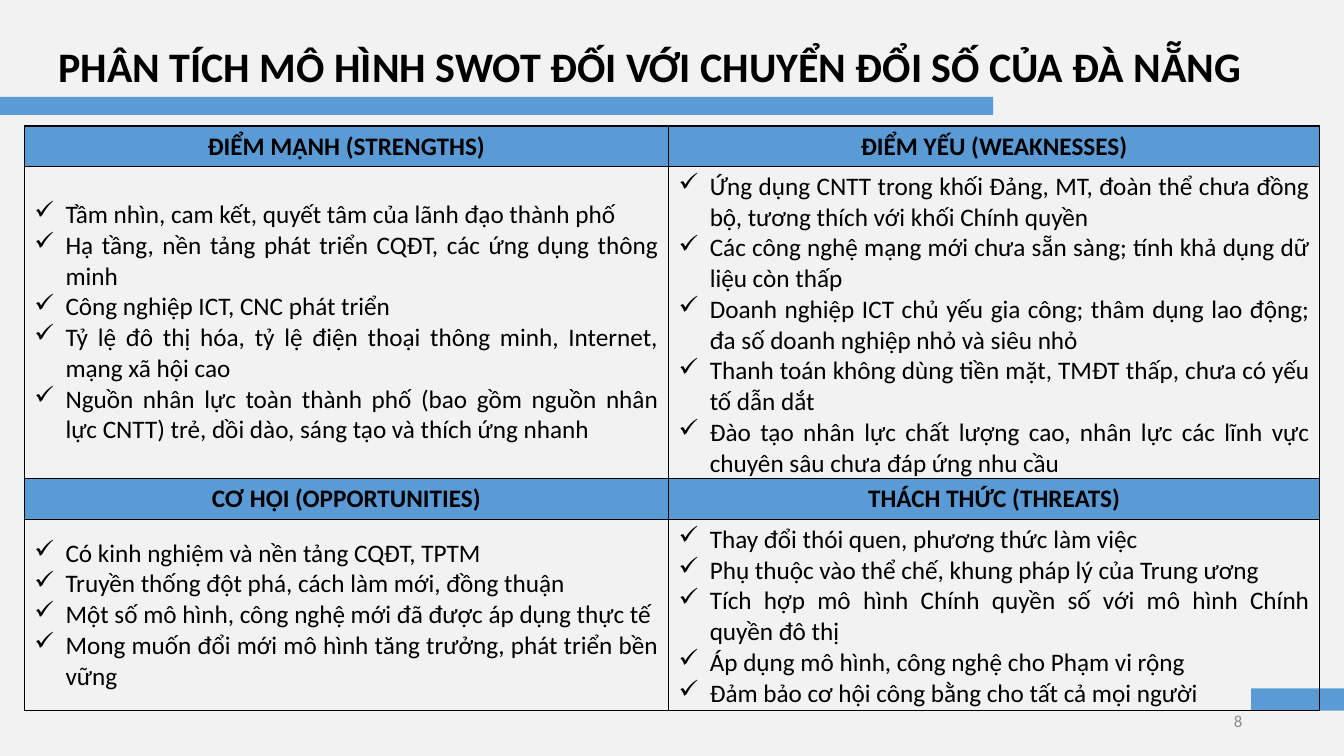
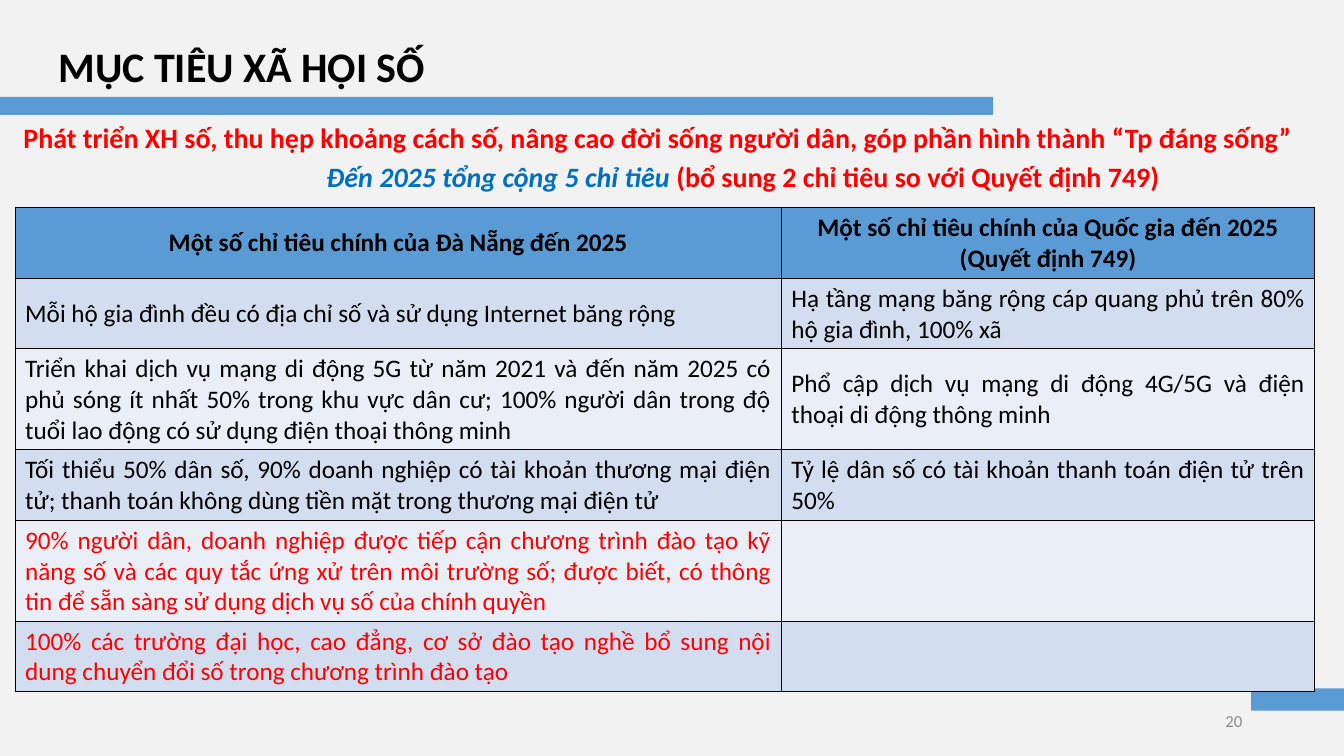
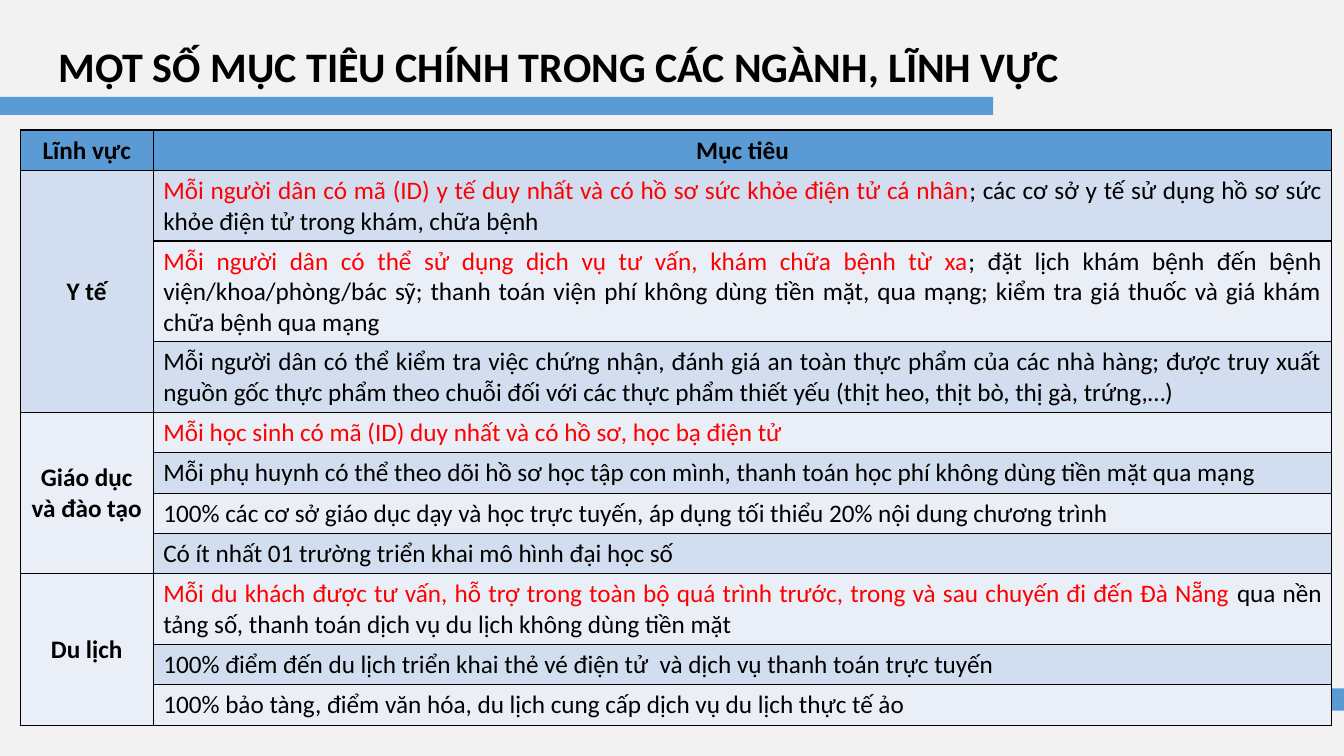
"""Build three slides on the digital transformation of Đà Nẵng."""
from lxml.etree import SubElement
from pptx import Presentation
from pptx.dml.color import RGBColor
from pptx.enum.shapes import MSO_SHAPE
from pptx.enum.text import MSO_ANCHOR, PP_ALIGN
from pptx.oxml.ns import qn
from pptx.util import Inches, Pt

FONT = "Calibri"
BACKGROUND, ACCENT, BLACK, GRAY = "F2F2F2", "5B9BD5", "000000", "8C8C8C"
RED, BLUE = "FF0000", "0070C0"
BANDS = ("D2DEEF", "EAEFF7")
NO_STYLE = "{2D5ABB26-0587-4C30-8999-92F81FD0307C}"
WIDTH, HEIGHT = 13.33, 7.5
CELL_PADDING, LINE_HEIGHT, BULLET_INDENT = 0.1, 0.3, 0.31

SWOT = [
    ("ĐIỂM MẠNH (STRENGTHS)", [
        "Tầm nhìn, cam kết, quyết tâm của lãnh đạo thành phố",
        "Hạ tầng, nền tảng phát triển CQĐT, các ứng dụng thông minh",
        "Công nghiệp ICT, CNC phát triển",
        "Tỷ lệ đô thị hóa, tỷ lệ điện thoại thông minh, Internet, mạng xã hội cao",
        "Nguồn nhân lực toàn thành phố (bao gồm nguồn nhân lực CNTT) trẻ, dồi dào, "
        "sáng tạo và thích ứng nhanh",
    ]),
    ("ĐIỂM YẾU (WEAKNESSES)", [
        "Ứng dụng CNTT trong khối Đảng, MT, đoàn thể chưa đồng bộ, tương thích với khối Chính quyền",
        "Các công nghệ mạng mới chưa sẵn sàng; tính khả dụng dữ liệu còn thấp",
        "Doanh nghiệp ICT chủ yếu gia công; thâm dụng lao động; đa số doanh nghiệp nhỏ và siêu nhỏ",
        "Thanh toán không dùng tiền mặt, TMĐT thấp, chưa có yếu tố dẫn dắt",
        "Đào tạo nhân lực chất lượng cao, nhân lực các lĩnh vực chuyên sâu chưa đáp ứng nhu cầu",
    ]),
    ("CƠ HỘI (OPPORTUNITIES)", [
        "Có kinh nghiệm và nền tảng CQĐT, TPTM",
        "Truyền thống đột phá, cách làm mới, đồng thuận",
        "Một số mô hình, công nghệ mới đã được áp dụng thực tế",
        "Mong muốn đổi mới mô hình tăng trưởng, phát triển bền vững",
    ]),
    ("THÁCH THỨC (THREATS)", [
        "Thay đổi thói quen, phương thức làm việc",
        "Phụ thuộc vào thể chế, khung pháp lý của Trung ương",
        "Tích hợp mô hình Chính quyền số với mô hình Chính quyền đô thị",
        "Áp dụng mô hình, công nghệ cho Phạm vi rộng",
        "Đảm bảo cơ hội công bằng cho tất cả mọi người",
    ]),
]
SWOT_LINES = (1, 10, 1, 6)

SOCIETY_SLOGAN = ("Phát triển XH số, thu hẹp khoảng cách số, nâng cao đời sống người dân, "
                  "góp phần hình thành “Tp đáng sống”")
SOCIETY_SUMMARY = [("Đến 2025 tổng cộng 5 chỉ tiêu", {"color": BLUE, "italic": True}),
                   (" (bổ sung 2 chỉ tiêu so với Quyết định 749)", {})]
SOCIETY_HEADER = [["Một số chỉ tiêu chính của Đà Nẵng đến 2025"],
                  ["Một số chỉ tiêu chính của Quốc gia đến 2025", "(Quyết định 749)"]]
SOCIETY_GOALS = [
    ("Mỗi hộ gia đình đều có địa chỉ số và sử dụng Internet băng rộng",
     "Hạ tầng mạng băng rộng cáp quang phủ trên 80% hộ gia đình, 100% xã"),
    ("Triển khai dịch vụ mạng di động 5G từ năm 2021 và đến năm 2025 có phủ sóng ít nhất 50% "
     "trong khu vực dân cư; 100% người dân trong độ tuổi lao động có sử dụng điện thoại thông minh",
     "Phổ cập dịch vụ mạng di động 4G/5G và điện thoại di động thông minh"),
    ("Tối thiểu 50% dân số, 90% doanh nghiệp có tài khoản thương mại điện tử; thanh toán "
     "không dùng tiền mặt trong thương mại điện tử",
     "Tỷ lệ dân số có tài khoản thanh toán điện tử trên 50%"),
    ("90% người dân, doanh nghiệp được tiếp cận chương trình đào tạo kỹ năng số và các quy tắc "
     "ứng xử trên môi trường số; được biết, có thông tin để sẵn sàng sử dụng dịch vụ số của "
     "chính quyền", ""),
    ("100% các trường đại học, cao đẳng, cơ sở đào tạo nghề bổ sung nội dung chuyển đổi số "
     "trong chương trình đào tạo", ""),
]
SOCIETY_LINES = (2, 2, 3, 2, 3, 2)

SECTOR_HEADER = [["Lĩnh vực"], ["Mục tiêu"]]
SECTORS = [
    ("Y tế", [
        ("Mỗi người dân có mã (ID) y tế duy nhất và có hồ sơ sức khỏe điện tử cá nhân",
         "; các cơ sở y tế sử dụng hồ sơ sức khỏe điện tử trong khám, chữa bệnh"),
        ("Mỗi người dân có thể sử dụng dịch vụ tư vấn, khám chữa bệnh từ xa",
         "; đặt lịch khám bệnh đến bệnh viện/khoa/phòng/bác sỹ; thanh toán viện phí không dùng "
         "tiền mặt, qua mạng; kiểm tra giá thuốc và giá khám chữa bệnh qua mạng"),
        ("", "Mỗi người dân có thể kiểm tra việc chứng nhận, đánh giá an toàn thực phẩm của các "
         "nhà hàng; được truy xuất nguồn gốc thực phẩm theo chuỗi đối với các thực phẩm thiết yếu "
         "(thịt heo, thịt bò, thị gà, trứng,…)"),
    ]),
    ("Giáo dục và đào tạo", [
        ("Mỗi học sinh có mã (ID) duy nhất và có hồ sơ, học bạ điện tử", ""),
        ("", "Mỗi phụ huynh có thể theo dõi hồ sơ học tập con mình, thanh toán học phí không "
         "dùng tiền mặt qua mạng"),
        ("", "100% các cơ sở giáo dục dạy và học trực tuyến, áp dụng tối thiểu 20% nội dung "
         "chương trình"),
        ("", "Có ít nhất 01 trường triển khai mô hình đại học số"),
    ]),
    ("Du lịch", [
        ("Mỗi du khách được tư vấn, hỗ trợ trong toàn bộ quá trình trước, trong và sau chuyến đi "
         "đến Đà Nẵng ", "qua nền tảng số, thanh toán dịch vụ du lịch không dùng tiền mặt"),
        ("", "100% điểm đến du lịch triển khai thẻ vé điện tử  và dịch vụ thanh toán trực tuyến"),
        ("", "100% bảo tàng, điểm văn hóa, du lịch cung cấp dịch vụ du lịch thực tế ảo"),
    ]),
]
SECTOR_LINES = (1, 2, 3, 2, 1, 1, 1, 1, 2, 1, 1)


def rgb(value):
    return RGBColor.from_string(value)


def write_text(frame, paragraphs, size=18, color=BLACK, bold=False, italic=False,
               align=PP_ALIGN.LEFT, bullet=None, spacing=0):
    """Write paragraphs, each a string or a list of (text, format) runs."""
    for index, content in enumerate(paragraphs):
        paragraph = frame.add_paragraph() if index else frame.paragraphs[0]
        paragraph.alignment = align
        paragraph.space_before = paragraph.space_after = Pt(spacing)
        if bullet:
            properties = paragraph._p.get_or_add_pPr()
            properties.set("marL", str(Inches(BULLET_INDENT)))
            properties.set("indent", str(-Inches(BULLET_INDENT)))
            SubElement(properties, qn("a:buChar"), char=bullet)
        for text, changes in [(content, {})] if isinstance(content, str) else content:
            run = paragraph.add_run()
            run.text = text
            font = run.font
            font.name, font.size, font.bold = FONT, Pt(size), bold
            font.italic = changes.get("italic", italic)
            font.color.rgb = rgb(changes.get("color", color))


def add_text(slide, left, top, width, height, paragraphs, anchor=MSO_ANCHOR.TOP, **text_format):
    frame = slide.shapes.add_textbox(*map(Inches, (left, top, width, height))).text_frame
    frame.word_wrap = True
    frame.vertical_anchor = anchor
    write_text(frame, paragraphs, **text_format)


def add_bar(slide, left, top, width, height):
    bar = slide.shapes.add_shape(MSO_SHAPE.RECTANGLE, *map(Inches, (left, top, width, height)))
    bar.shadow.inherit = False
    bar.fill.solid()
    bar.fill.fore_color.rgb = rgb(ACCENT)
    bar.line.fill.background()


def add_base_slide(presentation, title, number=None):
    slide = presentation.slides.add_slide(presentation.slide_layouts[6])
    add_bar(slide, 12.41, 6.83, WIDTH - 12.41, 0.22)
    add_bar(slide, 0, 0.96, 9.85, 0.18)
    add_text(slide, 0.48, 0.35, 12.12, 0.61, [title], size=30, bold=True)
    if number:
        add_text(slide, 9.42, 6.95, 3, 0.4, [number], anchor=MSO_ANCHOR.MIDDLE,
                 size=12, color=GRAY, align=PP_ALIGN.RIGHT)
    return slide


def add_grid(slide, left, top, widths, line_counts):
    heights = [CELL_PADDING + LINE_HEIGHT * count for count in line_counts]
    table = slide.shapes.add_table(len(heights), len(widths), *map(
        Inches, (left, top, sum(widths), sum(heights)))).table
    table._tbl.tblPr.find(qn("a:tableStyleId")).text = NO_STYLE
    for column, width in zip(table.columns, widths):
        column.width = Inches(width)
    for row, height in zip(table.rows, heights):
        row.height = Inches(height)
    for cell in table.iter_cells():
        properties = cell._tc.get_or_add_tcPr()
        for side in ("a:lnL", "a:lnR", "a:lnT", "a:lnB"):
            line = SubElement(properties, qn(side), w=str(Pt(1)))
            SubElement(SubElement(line, qn("a:solidFill")), qn("a:srgbClr"), val=BLACK)
    return table


def fill_cell(cell, paragraphs, fill=None, **text_format):
    cell.vertical_anchor = MSO_ANCHOR.MIDDLE
    if fill:
        cell.fill.solid()
        cell.fill.fore_color.rgb = rgb(fill)
    else:
        cell.fill.background()
    write_text(cell.text_frame, paragraphs, **text_format)


def fill_heading(cell, paragraphs, fill=ACCENT):
    fill_cell(cell, paragraphs, fill, bold=True, align=PP_ALIGN.CENTER)


def build_swot(presentation):
    slide = add_base_slide(
        presentation, "PHÂN TÍCH MÔ HÌNH SWOT ĐỐI VỚI CHUYỂN ĐỔI SỐ CỦA ĐÀ NẴNG", "8")
    table = add_grid(slide, 0.24, 1.25, (6.39, 6.46), SWOT_LINES)
    for index, (heading, points) in enumerate(SWOT):
        pair, column = divmod(index, 2)
        fill_heading(table.cell(2 * pair, column), [heading])
        fill_cell(table.cell(2 * pair + 1, column), points, align=PP_ALIGN.JUSTIFY, bullet="✓")


def build_society(presentation):
    slide = add_base_slide(presentation, "MỤC TIÊU XÃ HỘI SỐ", "20")
    table = add_grid(slide, 0.15, 2.06, (7.6, 5.29), SOCIETY_LINES)
    for column, heading in enumerate(SOCIETY_HEADER):
        fill_heading(table.cell(0, column), heading)
    for row, goals in enumerate(SOCIETY_GOALS):
        color = BLACK if goals[1] else RED
        for column, goal in enumerate(goals):
            fill_cell(table.cell(row + 1, column), [goal] if goal else [], BANDS[row % 2],
                      color=color, align=PP_ALIGN.JUSTIFY)
    add_text(slide, 0, 1.15, 13.05, 0.44, [SOCIETY_SLOGAN], size=20, color=RED, bold=True,
             align=PP_ALIGN.CENTER, spacing=3)
    add_text(slide, 3.14, 1.53, 9, 0.44, [SOCIETY_SUMMARY], size=20, color=RED, bold=True)


def build_sectors(presentation):
    slide = add_base_slide(presentation, "MỘT SỐ MỤC TIÊU CHÍNH TRONG CÁC NGÀNH, LĨNH VỰC")
    table = add_grid(slide, 0.2, 1.29, (1.32, 11.69), SECTOR_LINES)
    for column, heading in enumerate(SECTOR_HEADER):
        fill_heading(table.cell(0, column), heading)
    row = 1
    for sector, goals in SECTORS:
        sector_cell = table.cell(row, 0)
        sector_cell.merge(table.cell(row + len(goals) - 1, 0))
        fill_heading(sector_cell, [sector], BANDS[(row - 1) % 2])
        for highlight, rest in goals:
            runs = [(text, {"color": color})
                    for text, color in ((highlight, RED), (rest, BLACK)) if text]
            fill_cell(table.cell(row, 1), [runs], BANDS[(row - 1) % 2], align=PP_ALIGN.JUSTIFY)
            row += 1


def main():
    presentation = Presentation()
    presentation.slide_width, presentation.slide_height = Inches(WIDTH), Inches(HEIGHT)
    background = presentation.slide_master.background.fill
    background.solid()
    background.fore_color.rgb = rgb(BACKGROUND)
    build_swot(presentation)
    build_society(presentation)
    build_sectors(presentation)
    presentation.save("out.pptx")


if __name__ == "__main__":
    main()
